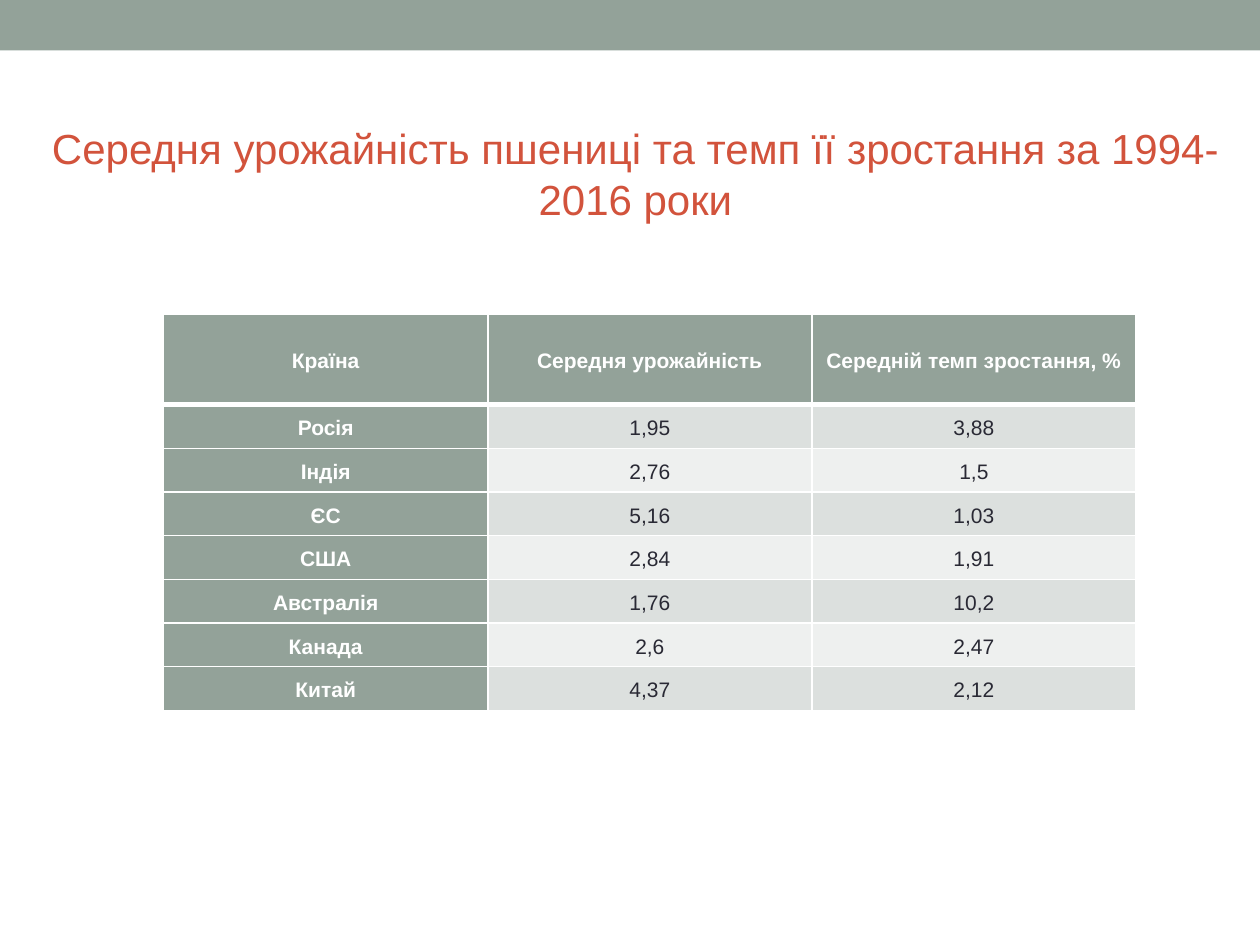
from lxml import etree
from pptx import Presentation
from pptx import util as u
from pptx.dml.color import RGBColor
from pptx.enum import shapes, text
from pptx.oxml.ns import qn

SAGE, WHITE, DARK, RED = "93A299", "FFFFFF", "292934", "D2533C"
BANDS = ("DCE0DE", "EEF0EF")
ROWS = [
    ("Країна", "Середня урожайність", "Середній темп зростання, %"),
    ("Росія", "1,95", "3,88"),
    ("Індія", "2,76", "1,5"),
    ("ЄС", "5,16", "1,03"),
    ("США", "2,84", "1,91"),
    ("Австралія", "1,76", "10,2"),
    ("Канада", "2,6", "2,47"),
    ("Китай", "4,37", "2,12"),
]


def paint(fill, hue):
    fill.solid()
    fill.fore_color.rgb = RGBColor.from_string(hue)


def style(para, size, hue, bold=False):
    para.alignment = text.PP_ALIGN.CENTER
    font = para.font
    font.name, font.size, font.bold = "Arial", u.Pt(size), bold
    font.color.rgb = RGBColor.from_string(hue)


def add_band(slide, width):
    band = slide.shapes.add_shape(
        shapes.MSO_SHAPE.RECTANGLE, 0, 0, width, u.Cm(1.02))
    band.shadow.inherit = False
    paint(band.fill, SAGE)
    band.line.fill.background()


def add_title(slide, words):
    box = slide.shapes.add_textbox(u.Cm(0.25), u.Cm(2.34), u.Cm(25.12), u.Cm(2.31))
    frame = box.text_frame
    frame.word_wrap = True
    frame.vertical_anchor = text.MSO_ANCHOR.MIDDLE
    frame.text = words
    style(frame.paragraphs[0], 24, RED)


def add_edges(cell, top, bottom):
    # Borders must come before the fill in the cell properties
    props = cell._tc.get_or_add_tcPr()
    sides = (("L", 1), ("R", 1), ("T", top), ("B", bottom))
    for spot, (side, width) in enumerate(sides):
        line = etree.Element(qn(f"a:ln{side}"), w=str(u.Pt(width)))
        fill = etree.SubElement(line, qn("a:solidFill"))
        etree.SubElement(fill, qn("a:srgbClr"), val=WHITE)
        props.insert(spot, line)


def fill_cell(cell, words, row, col):
    head = row == 0 or col == 0
    cell.text = words
    cell.vertical_anchor = text.MSO_ANCHOR.MIDDLE
    cell.margin_left = cell.margin_right = u.Cm(0.18)
    cell.margin_top = cell.margin_bottom = 0
    para = cell.text_frame.paragraphs[0]
    para.line_spacing = 1.15
    style(para, 12, WHITE if head else DARK, head)
    paint(cell.fill, SAGE if head else BANDS[(row - 1) % 2])
    add_edges(cell, 3 if row == 1 else 1, 3 if row == 0 else 1)


def add_grid(slide, rows):
    grid = slide.shapes.add_table(
        len(rows), len(rows[0]), u.Cm(3.3), u.Cm(6.33), u.Cm(19.6), u.Cm(8.01)).table
    grid.first_col = True
    for row, words in enumerate(rows):
        grid.rows[row].height = u.Cm(0.88 if row else 1.83)
        for col, word in enumerate(words):
            fill_cell(grid.cell(row, col), word, row, col)


def main():
    deck = Presentation()
    deck.slide_width, deck.slide_height = u.Cm(25.4), u.Cm(19.05)
    slide = deck.slides.add_slide(deck.slide_layouts[6])
    paint(slide.background.fill, WHITE)

    # Top band, yield table, title
    add_band(slide, deck.slide_width)
    add_grid(slide, ROWS)
    add_title(slide, "Середня урожайність пшениці та темп її зростання за 1994-2016 роки")
    deck.save("out.pptx")


if __name__ == "__main__":
    main()
